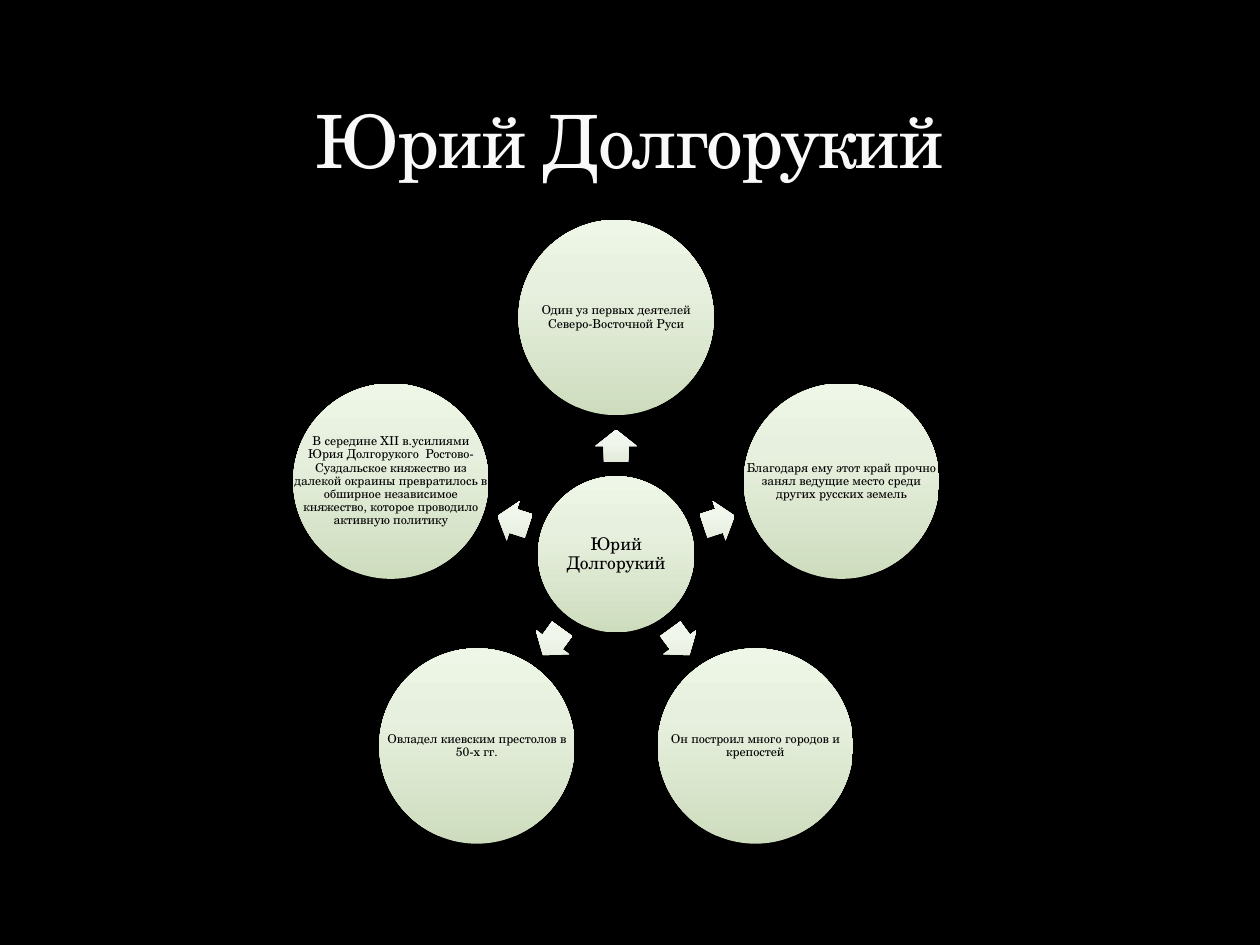
from math import cos, radians, sin

from lxml import etree
from pptx import Presentation
from pptx.dml.color import RGBColor
from pptx.enum.shapes import MSO_SHAPE
from pptx.enum.text import MSO_ANCHOR, PP_ALIGN
from pptx.oxml.ns import qn
from pptx.util import Inches, Pt

OVAL, ARROW = MSO_SHAPE.OVAL, MSO_SHAPE.RIGHT_ARROW
MIDDLE, BOTTOM = MSO_ANCHOR.MIDDLE, MSO_ANCHOR.BOTTOM
CENTER = PP_ALIGN.CENTER

TITLE = "Юрий Долгорукий"
HUB = "Юрий Долгорукий"
FACTS = [
    "Один уз первых деятелей Северо-Восточной Руси",
    "Благодаря ему этот край прочно занял ведущие место среди других русских земель",
    "Он построил много городов и крепостей",
    "Овладел киевским престолов в 50-х гг.",
    "В середине XII в.усилиями Юрия Долгорукого  Ростово-Суздальское княжество "
    "из далекой окраины превратилось в обширное независимое княжество, "
    "которое проводило активную политику",
]
FONT = "TeX Gyre Schola"
COLORS = {"background": "000000", "title": "F9F9F9", "text": "000000"}
CIRCLE_STOPS = [(0, "CEDCBE"), (65, "E7F0DE"), (100, "EEF6E7")]
ARROW_STOPS = [(0, "E3EADB"), (65, "F1F6EC"), (100, "F5F9F1")]

CENTER_X, CENTER_Y = 4.89, 4.4
HUB_SIZE, FACT_SIZE = 1.24, 1.55
FACT_RADIUS, ARROW_RADIUS = 1.88, 0.86
ARROW_W, ARROW_H = 0.26, 0.33


def rgb(name):
    return RGBColor.from_string(COLORS[name])


def box_around(x, y, w, h):
    return [Inches(v) for v in (x - w / 2, y - h / 2, w, h)]


def add_gradient_shape(slide, kind, box, stops):
    s = slide.shapes.add_shape(kind, *box)
    s.shadow.inherit = False
    s.line.fill.background()
    s.fill.gradient()
    s.fill.gradient_angle = 90
    grad = s._element.spPr.find(qn("a:gradFill"))
    grad.set("rotWithShape", "0")
    stop_list = grad.find(qn("a:gsLst"))
    for old in list(stop_list):
        stop_list.remove(old)
    for position, color in stops:
        stop = etree.SubElement(stop_list, qn("a:gs"), pos=str(position * 1000))
        etree.SubElement(stop, qn("a:srgbClr"), val=color)
    return s


def add_text(slide, box, text, size, color, anchor, inset=None):
    tf = slide.shapes.add_textbox(*box).text_frame
    tf.word_wrap = True
    tf.vertical_anchor = anchor
    if inset is not None:
        tf.margin_left = tf.margin_right = Inches(inset)
        tf.margin_top = tf.margin_bottom = Inches(inset)
    p = tf.paragraphs[0]
    p.text = text
    p.alignment = CENTER
    p.font.name = FONT
    p.font.size = Pt(size)
    p.font.color.rgb = rgb(color)
    return p


def add_circle(slide, x, y, diameter, text, size):
    box = box_around(x, y, diameter, diameter)
    add_gradient_shape(slide, OVAL, box, CIRCLE_STOPS)
    p = add_text(slide, box, text, size, "text", MIDDLE, 0.01)
    p.line_spacing = 0.9


def point_on_ring(angle, radius):
    return (CENTER_X + radius * cos(radians(angle)),
            CENTER_Y + radius * sin(radians(angle)))


def main():
    prs = Presentation()
    prs.slide_width, prs.slide_height = Inches(10), Inches(7.5)
    slide = prs.slides.add_slide(prs.slide_layouts[6])
    slide.background.fill.solid()
    slide.background.fill.fore_color.rgb = rgb("background")

    add_circle(slide, CENTER_X, CENTER_Y, HUB_SIZE, HUB, 10)
    for i, fact in enumerate(FACTS):
        angle = (270 + i * 360 / len(FACTS)) % 360
        box = box_around(*point_on_ring(angle, ARROW_RADIUS), ARROW_W, ARROW_H)
        arrow = add_gradient_shape(slide, ARROW, box, ARROW_STOPS)
        arrow.adjustments[0], arrow.adjustments[1] = 0.6, 0.5
        arrow.rotation = angle
        add_circle(slide, *point_on_ring(angle, FACT_RADIUS), FACT_SIZE, fact, 7)

    title_box = [Inches(v) for v in (0.5, 0.17, 9, 1.33)]
    p = add_text(slide, title_box, TITLE, 42, "title", BOTTOM)
    p.runs[0].font._element.set("spc", "-100")
    prs.save("out.pptx")


if __name__ == "__main__":
    main()
